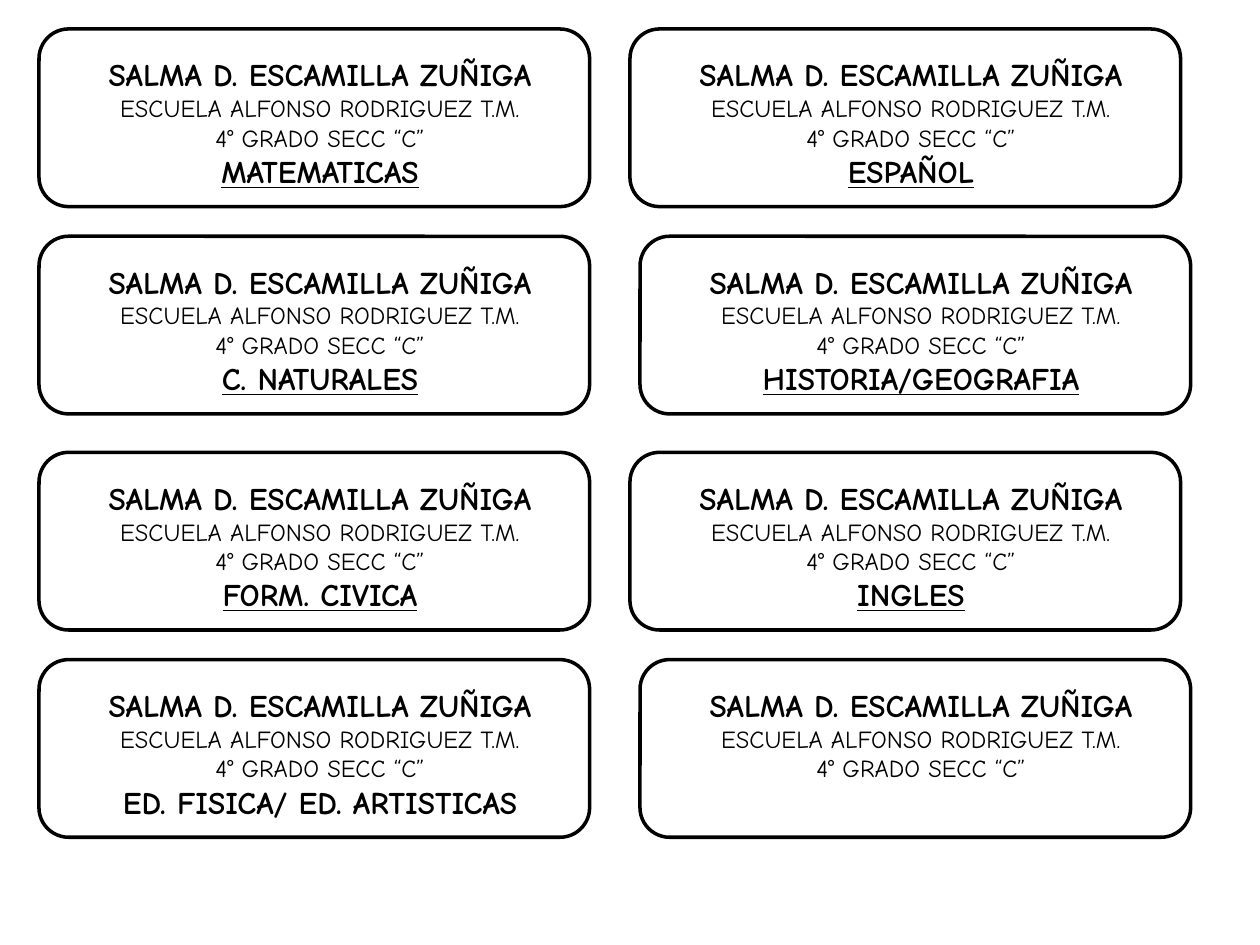
import pptx
import pptx.dml.color
import pptx.enum.shapes
import pptx.enum.text
import pptx.util

COLORS = {"ink": "000000"}
FONT = "Comic Neue"
SLIDE_W, SLIDE_H = 10, 7.5
LABEL_W, LABEL_H = 4.37, 1.41
LEFT, TOP = 0.31, 0.23
COLUMN_STEP, ROW_STEP, PAIR_STEP = 4.69, 1.645, 3.36
ODD_ROW_SHIFT = 0.08
TEXT_DX, TEXT_DY, TEXT_W = 0.08, 0.16, 4.3
TEXT_H, SHORT_TEXT_H = 1.18, 0.88

HEADER = [
    ("SALMA D. ESCAMILLA ZUÑIGA", 18, True, False),
    ("ESCUELA ALFONSO RODRIGUEZ T.M.", 14, False, False),
    ("4° GRADO SECC “C”", 14, False, False),
]
SUBJECTS = [
    [("MATEMATICAS", True), ("ESPAÑOL", True)],
    [("C. NATURALES", True), ("HISTORIA/GEOGRAFIA", True)],
    [("FORM. CIVICA", True), ("INGLES", True)],
    [("ED. FISICA/ ED. ARTISTICAS", False), None],
]


def box(x, y, w, h):
    """Return a box given in inches as lengths."""
    return [pptx.util.Inches(v) for v in (x, y, w, h)]


def color(name):
    """Return the named colour."""
    return pptx.dml.color.RGBColor.from_string(COLORS[name])


def add_frame(group, x, y):
    """Add the rounded outline of a label."""
    s = group.shapes.add_shape(
        pptx.enum.shapes.MSO_SHAPE.ROUNDED_RECTANGLE, *box(x, y, LABEL_W, LABEL_H)
    )
    s.shadow.inherit = False
    s.fill.background()
    s.line.color.rgb = color("ink")
    s.line.width = pptx.util.Pt(2)


def add_lines(group, x, y, h, lines):
    """Add centred lines of text, one paragraph each."""
    tf = group.shapes.add_textbox(*box(x, y, TEXT_W, h)).text_frame
    tf.word_wrap = True
    tf.auto_size = pptx.enum.text.MSO_AUTO_SIZE.SHAPE_TO_FIT_TEXT
    for i, (text, size, bold, underline) in enumerate(lines):
        p = tf.add_paragraph() if i else tf.paragraphs[0]
        p.alignment = pptx.enum.text.PP_ALIGN.CENTER
        r = p.add_run()
        r.text = text
        r.font.name = FONT
        r.font.size = pptx.util.Pt(size)
        r.font.bold = bold
        r.font.underline = underline
        r.font.color.rgb = color("ink")


def add_label(slide, row, column, subject):
    """Add one notebook label at its place in the grid."""
    pair, odd = divmod(row, 2)
    x = LEFT + column * (COLUMN_STEP + odd * ODD_ROW_SHIFT)
    y = TOP + pair * PAIR_STEP + odd * ROW_STEP
    lines = list(HEADER)
    if subject:
        text, underline = subject
        lines.append((text, 18, True, underline))
    group = slide.shapes.add_group_shape()
    add_frame(group, x, y)
    text_h = TEXT_H if subject else SHORT_TEXT_H
    add_lines(group, x + TEXT_DX, y + TEXT_DY, text_h, lines)


def main():
    """Build the sheet of notebook labels."""
    prs = pptx.Presentation()
    prs.slide_width = pptx.util.Inches(SLIDE_W)
    prs.slide_height = pptx.util.Inches(SLIDE_H)
    slide = prs.slides.add_slide(prs.slide_layouts[6])
    for row, subjects in enumerate(SUBJECTS):
        for column, subject in enumerate(subjects):
            add_label(slide, row, column, subject)
    prs.save("out.pptx")


if __name__ == "__main__":
    main()
